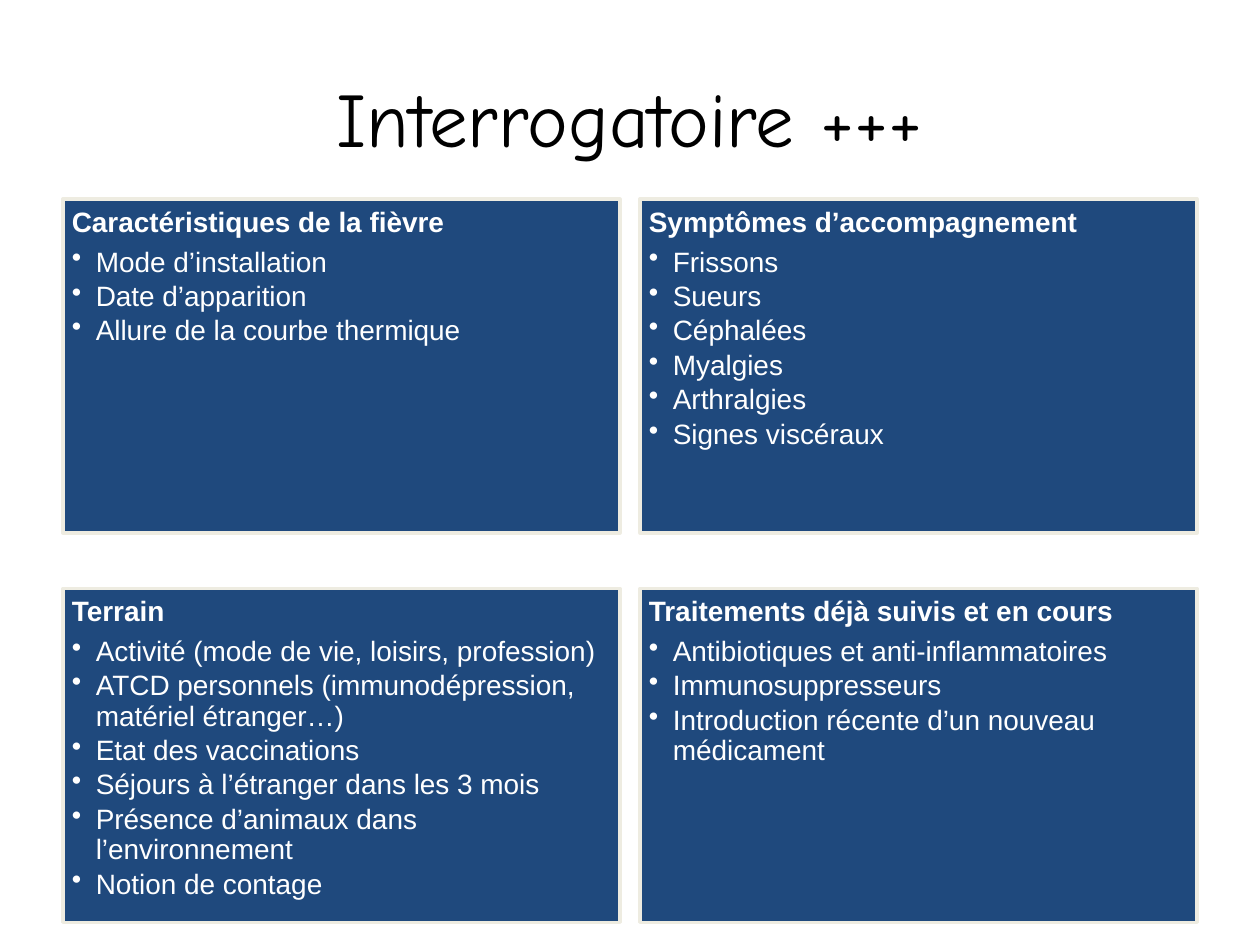
import pptx
import pptx.dml.color
import pptx.enum.shapes
import pptx.enum.text
import pptx.util
from lxml import etree
from pptx.oxml.ns import qn

Inches = pptx.util.Inches
Pt = pptx.util.Pt
MARGIN, TOP = 0.5, 1.58
CARD_W, CARD_H = 4.42, 2.65
STEP_X, STEP_Y = 4.58, 3.09

# Cards in reading order, two per row
CARDS = [
    ("Caractéristiques de la fièvre",
     ["Mode d’installation", "Date d’apparition",
      "Allure de la courbe thermique"]),
    ("Symptômes d’accompagnement",
     ["Frissons", "Sueurs", "Céphalées", "Myalgies", "Arthralgies",
      "Signes viscéraux"]),
    ("Terrain",
     ["Activité (mode de vie, loisirs, profession)",
      "ATCD personnels (immunodépression, matériel étranger…)",
      "Etat des vaccinations",
      "Séjours à l’étranger dans les 3 mois",
      "Présence d’animaux dans l’environnement",
      "Notion de contage"]),
    ("Traitements déjà suivis et en cours",
     ["Antibiotiques et anti-inflammatoires", "Immunosuppresseurs",
      "Introduction récente d’un nouveau médicament"]),
]


def rgb(value):
    return pptx.dml.color.RGBColor.from_string(value)


class Deck:
    """Holds the style and the current slide."""
    fill, border = "1F497D", "EEECE1"
    title_color, text_color = "000000", "FFFFFF"
    title_font, text_font = "Comic Neue", "Arial"
    title_size, text_size = 44, 16

    def __init__(self, slide):
        self.s = slide

    def run(self, p, text, font, size, color, bold=False):
        r = p.add_run()
        r.text = text
        r.font.name = font
        r.font.size = Pt(size)
        r.font.bold = bold
        r.font.color.rgb = rgb(color)

    def title(self, text, x, y, w, h):
        sp = self.s.shapes.add_textbox(Inches(x), Inches(y), Inches(w), Inches(h))
        tf = sp.text_frame
        tf.word_wrap = True
        tf.vertical_anchor = pptx.enum.text.MSO_ANCHOR.MIDDLE
        p = tf.paragraphs[0]
        p.alignment = pptx.enum.text.PP_ALIGN.CENTER
        self.run(p, text, self.title_font, self.title_size, self.title_color)

    def bullet(self, p):
        pPr = p._p.get_or_add_pPr()
        pPr.set("marL", str(Inches(0.19)))
        pPr.set("indent", str(-Inches(0.19)))
        etree.SubElement(pPr, qn("a:buChar")).set("char", "•")

    def card(self, heading, items, x, y, w, h):
        sp = self.s.shapes.add_shape(
            pptx.enum.shapes.MSO_SHAPE.RECTANGLE,
            Inches(x), Inches(y), Inches(w), Inches(h))
        sp.shadow.inherit = False
        sp.fill.solid()
        sp.fill.fore_color.rgb = rgb(self.fill)
        sp.line.color.rgb = rgb(self.border)
        sp.line.width = Pt(2)
        tf = sp.text_frame
        tf.word_wrap = True
        tf.vertical_anchor = pptx.enum.text.MSO_ANCHOR.TOP
        tf.margin_left = tf.margin_right = Inches(0.07)
        tf.margin_top = tf.margin_bottom = Inches(0.07)
        for i, text in enumerate([heading] + items):
            is_heading = i == 0
            p = tf.paragraphs[0] if is_heading else tf.add_paragraph()
            if not is_heading:
                self.bullet(p)
            p.alignment = pptx.enum.text.PP_ALIGN.LEFT
            p.line_spacing = 0.9
            p.space_after = Pt(5.6 if is_heading else 2.4)
            self.run(p, text, self.text_font, self.text_size,
                     self.text_color, bold=is_heading)


def main():
    prs = pptx.Presentation()
    prs.slide_width, prs.slide_height = Inches(10), Inches(7.5)
    deck = Deck(prs.slides.add_slide(prs.slide_layouts[6]))
    deck.title("Interrogatoire +++", MARGIN, 0.3, 9, 1.25)
    for i, (heading, items) in enumerate(CARDS):
        row, col = divmod(i, 2)
        deck.card(heading, items, MARGIN + col * STEP_X, TOP + row * STEP_Y,
                  CARD_W, CARD_H)
    prs.save("out.pptx")


if __name__ == "__main__":
    main()
